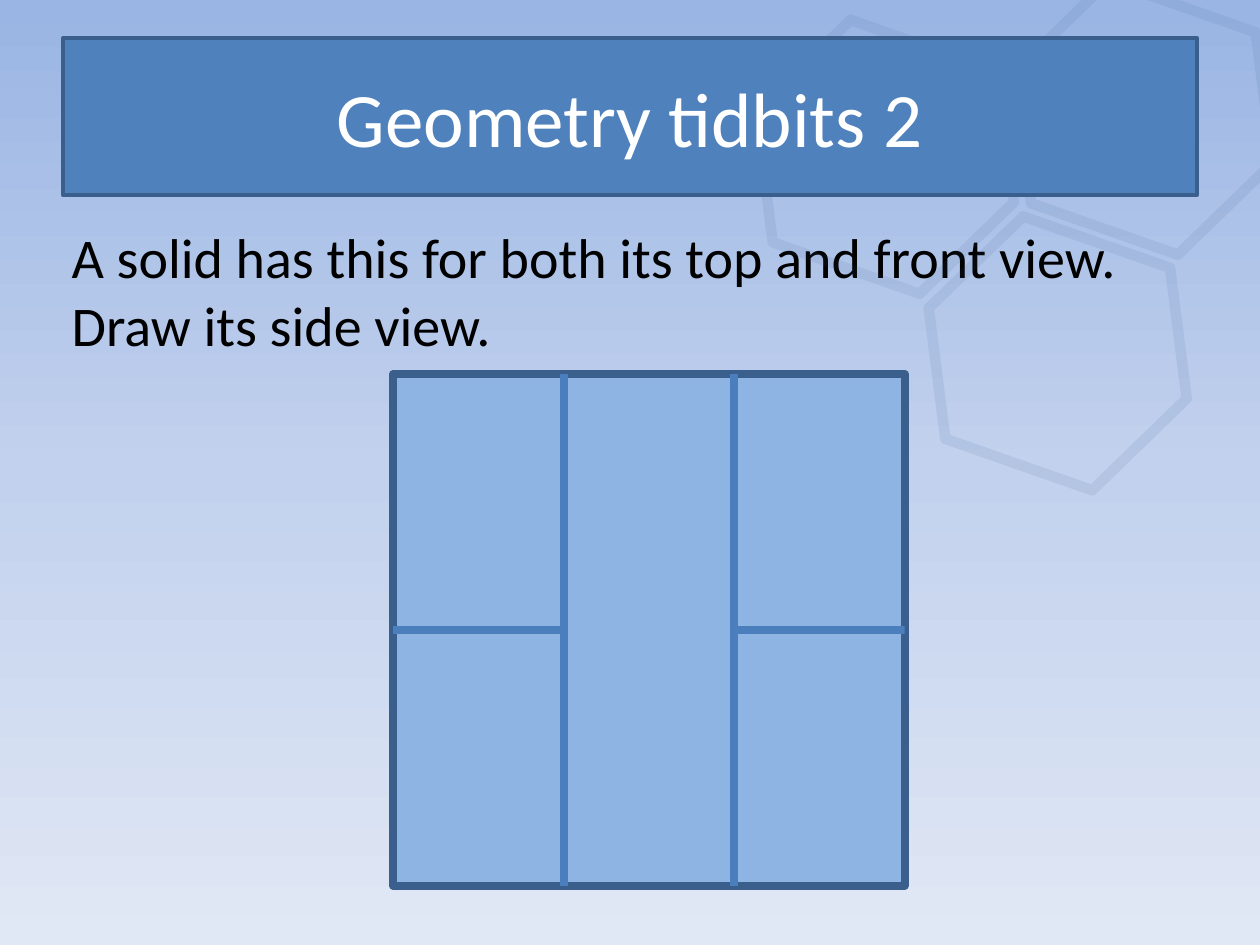
from copy import deepcopy
from pptx import Presentation
from pptx.dml.color import RGBColor
from pptx.enum.shapes import MSO_CONNECTOR as Connector, MSO_SHAPE as Shape
from pptx.enum.text import MSO_ANCHOR as Anchor, PP_ALIGN as Align
from pptx.oxml.ns import qn
from pptx.util import Inches, Pt
from lxml.etree import SubElement

TITLE = "Geometry tidbits 2"
TASK = "A solid has this for both its top and front view. Draw its side view."
BACKDROP = [(0, "9AB5E4"), (0.5, "C2D1ED"), (1, "E1E8F5")]
HEXAGON_CORNERS = [(5.94, 0.31), (7.31, 1.87), (7.99, 0)]
HEXAGON_SIZE = (2.17, 1.87)
DARK, BANNER, FACE, EDGE = "3A5F8C", "4F81BD", "8EB4E3", "4B7EBC"
LEFT, TOP, SIDE, COLUMNS = 3.12, 2.97, 4.06, 3
LEFT_SIDE, RIGHT_SIDE = 1, 3

deck = Presentation()
deck.slide_width, deck.slide_height = Inches(10), Inches(7.5)
slide = deck.slides.add_slide(deck.slide_layouts[6])


def color(code):
    return RGBColor.from_string(code)


def paint_backdrop():
    fill = slide.background.fill
    fill.gradient()
    fill.gradient_angle = 270
    stops = slide.background._cSld.find(".//" + qn("a:gsLst"))
    stops.insert(1, deepcopy(stops[0]))
    for stop, (position, code) in zip(fill.gradient_stops, BACKDROP):
        stop.position = position
        stop.color.rgb = color(code)


def outline(part, code, width):
    part.line.color.rgb = color(code)
    part.line.width = Pt(width)


def add_outlined(parent, kind, box, code, width, fill=None):
    part = parent.add_shape(kind, *map(Inches, box))
    part.shadow.inherit = False
    outline(part, code, width)
    if fill:
        part.fill.solid()
        part.fill.fore_color.rgb = color(fill)
    else:
        part.fill.background()
    return part


def write(holder, text, size, code, align=Align.LEFT, anchor=Anchor.TOP):
    frame = holder.text_frame
    frame.word_wrap = True
    frame.vertical_anchor = anchor
    paragraph = frame.paragraphs[0]
    paragraph.text = text
    paragraph.alignment = align
    paragraph.font.name = "Calibri"
    paragraph.font.size = Pt(size)
    paragraph.font.color.rgb = color(code)


def add_edge(start, end):
    edge = slide.shapes.add_connector(Connector.STRAIGHT, *map(Inches, start + end))
    SubElement(edge._element.spPr, qn("a:effectLst"))
    outline(edge, EDGE, 4.5)
    return edge


paint_backdrop()
task = slide.shapes.add_textbox(*map(Inches, (0.47, 1.72, 9.03, 4.95)))
write(task, TASK, 32, "000000")

honeycomb = slide.shapes.add_group_shape()
for corner in HEXAGON_CORNERS:
    hexagon = add_outlined(honeycomb.shapes, Shape.HEXAGON, corner + HEXAGON_SIZE, DARK, 6)
    hexagon.rotation = 19.3
    tint = hexagon.line.fill._xPr.find(".//" + qn("a:srgbClr"))
    SubElement(tint, qn("a:alpha"), val="10000")

banner = add_outlined(slide.shapes, Shape.RECTANGLE, (0.5, 0.3, 9, 1.25), DARK, 2, BANNER)
write(banner, TITLE, 44, "FFFFFF", align=Align.CENTER, anchor=Anchor.MIDDLE)

square = add_outlined(slide.shapes, Shape.RECTANGLE, (LEFT, TOP, SIDE, SIDE), DARK, 4.5, FACE)
middle = TOP + SIDE / 2
dividers = [LEFT + SIDE * column / COLUMNS for column in range(1, COLUMNS)]
for x in dividers:
    add_edge((x, TOP), (x, TOP + SIDE))
for x, outer, site in zip(dividers, (LEFT, LEFT + SIDE), (LEFT_SIDE, RIGHT_SIDE)):
    add_edge((outer, middle), (x, middle)).begin_connect(square, site)

deck.save("out.pptx")
